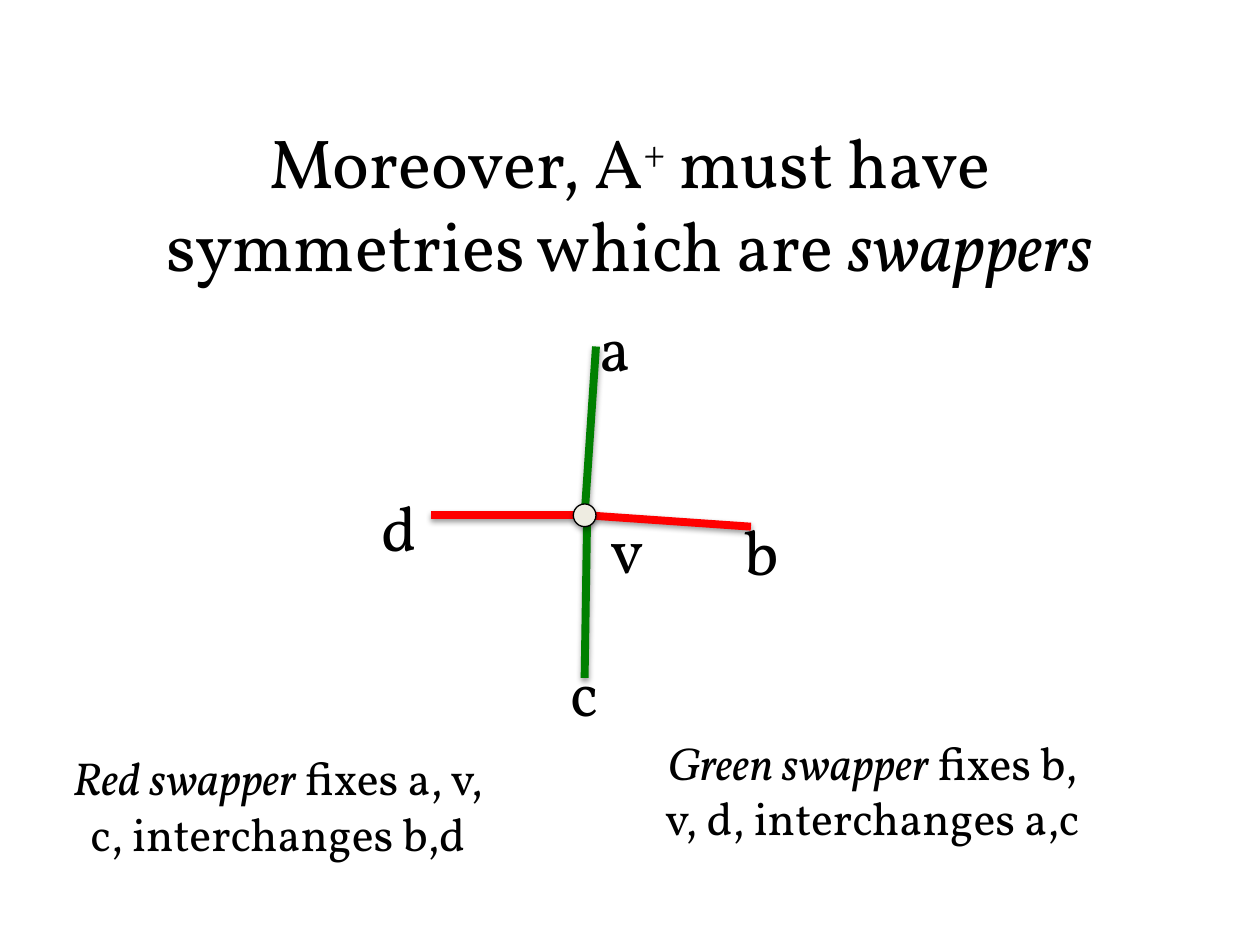
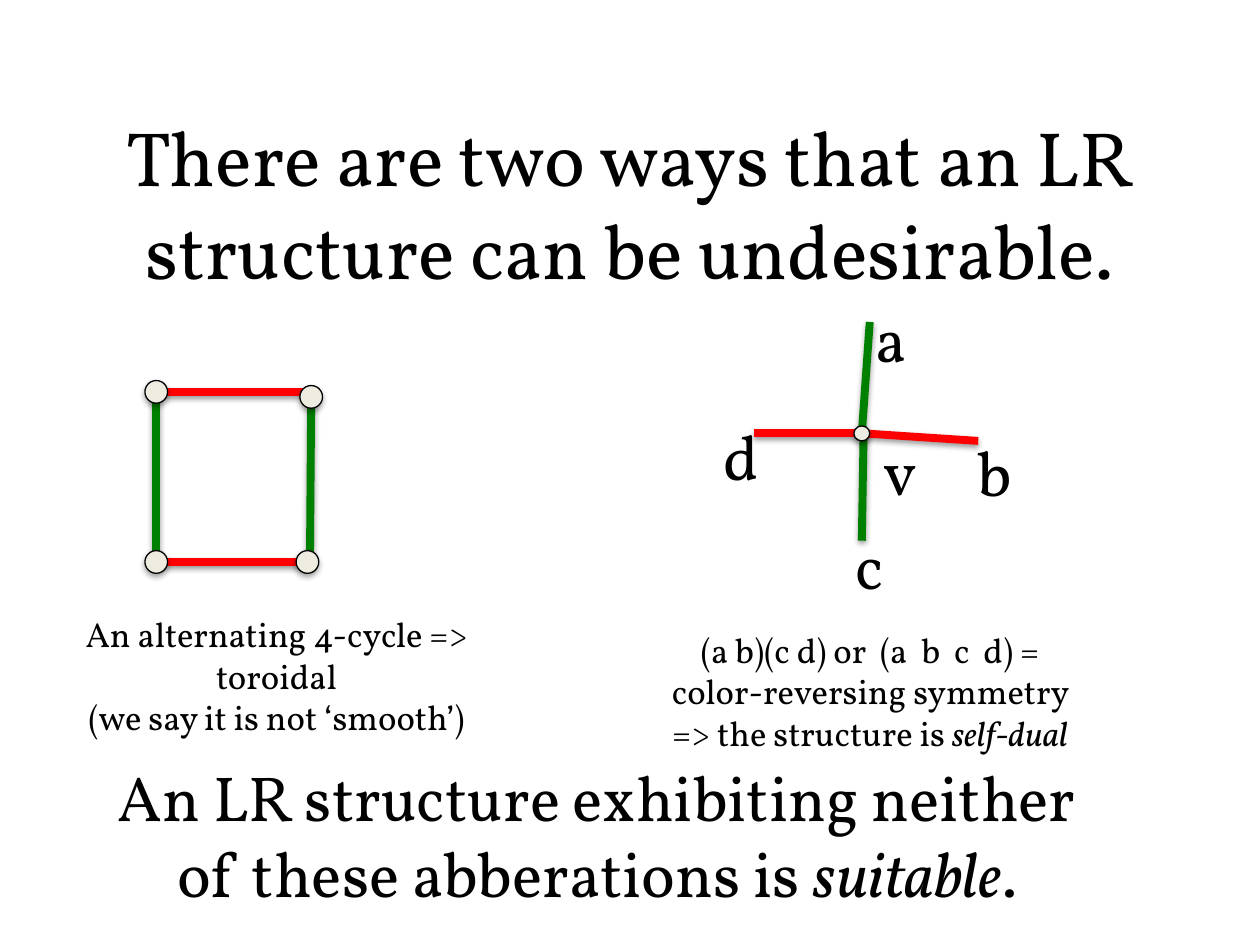
from dataclasses import dataclass
from typing import NamedTuple

import pptx
import pptx.dml.color
import pptx.enum.shapes
import pptx.enum.text
import pptx.oxml
import pptx.oxml.ns
import pptx.shapes.shapetree
import pptx.slide
import pptx.util
from pptx.util import Inches

BLACK = pptx.dml.color.RGBColor(0x00, 0x00, 0x00)
GREEN = pptx.dml.color.RGBColor(0x00, 0x80, 0x00)
RED = pptx.dml.color.RGBColor(0xFF, 0x00, 0x00)
IVORY = pptx.dml.color.RGBColor(0xEE, 0xEC, 0xE1)
FONT = "Vollkorn"
CENTER = pptx.enum.text.PP_ALIGN.CENTER
LEFT = pptx.enum.text.PP_ALIGN.LEFT
MIDDLE = pptx.enum.text.MSO_ANCHOR.MIDDLE
TOP = pptx.enum.text.MSO_ANCHOR.TOP
NODE_SIZE = 0.18
LABEL_SIZE = (0.48, 0.71)


class Run(NamedTuple):
    text: str
    italic: bool = False
    superscript: bool = False


class Box(NamedTuple):
    left: float
    top: float
    width: float
    height: float


class Point(NamedTuple):
    x: float
    y: float


@dataclass(frozen=True)
class Edge:
    start: Point
    end: Point
    color: pptx.dml.color.RGBColor


@dataclass(frozen=True)
class VertexLabel:
    letter: str
    offset: Point


TITLE_BOX = Box(0.75, 0.69, 8.5, 1.83)

CROSS_EDGES = [
    Edge(Point(0, 1.29), Point(0.02, 0), GREEN),
    Edge(Point(0, 0), Point(0.09, -1.34), GREEN),
    Edge(Point(-1.22, 0), Point(0, 0), RED),
    Edge(Point(0.02, 0), Point(1.32, 0.09), RED),
]
CROSS_LABELS = [
    VertexLabel("a", Point(0.02, -1.69)),
    VertexLabel("d", Point(-1.71, -0.26)),
    VertexLabel("v", Point(0.11, -0.09)),
    VertexLabel("c", Point(-0.21, 1.05)),
    VertexLabel("b", Point(1.17, -0.07)),
]
CYCLE_EDGES = [
    Edge(Point(2.46, 4.46), Point(2.47, 3.17), GREEN),
    Edge(Point(1.24, 4.46), Point(1.24, 3.11), GREEN),
    Edge(Point(1.24, 3.11), Point(2.47, 3.11), RED),
    Edge(Point(1.24, 4.46), Point(2.47, 4.46), RED),
]
CYCLE_NODES = [Point(1.24, 4.46), Point(1.24, 3.11), Point(2.44, 4.46), Point(2.47, 3.15)]

Shapes = pptx.shapes.shapetree._BaseGroupShapes


def add_text(
    shapes: Shapes,
    box: Box,
    *paragraphs: list[Run],
    size: float,
    align: pptx.enum.text.PP_ALIGN = CENTER,
    anchor: pptx.enum.text.MSO_ANCHOR = MIDDLE,
) -> None:
    frame = shapes.add_textbox(*map(Inches, box)).text_frame
    frame.word_wrap = True
    frame.vertical_anchor = anchor
    for index, runs in enumerate(paragraphs):
        paragraph = frame.add_paragraph() if index else frame.paragraphs[0]
        paragraph.alignment = align
        for part in runs:
            run = paragraph.add_run()
            run.text = part.text
            run.font.name = FONT
            run.font.size = pptx.util.Pt(size)
            run.font.italic = part.italic
            run.font.color.rgb = BLACK
            if part.superscript:
                run.font._rPr.set("baseline", "30000")


def add_shadow(properties: pptx.oxml.xmlchemy.BaseOxmlElement, distance: int, opacity: int) -> None:
    for inherited in properties.findall(pptx.oxml.ns.qn("a:effectLst")):
        properties.remove(inherited)
    properties.append(pptx.oxml.parse_xml(
        f'<a:effectLst {pptx.oxml.ns.nsdecls("a")}>'
        f'<a:outerShdw blurRad="40000" dist="{distance}" dir="5400000" rotWithShape="0">'
        f'<a:srgbClr val="{BLACK}"><a:alpha val="{opacity * 1000}"/></a:srgbClr>'
        '</a:outerShdw></a:effectLst>'
    ))


def add_edge(shapes: Shapes, edge: Edge) -> None:
    line = shapes.add_connector(
        pptx.enum.shapes.MSO_CONNECTOR.STRAIGHT, *map(Inches, edge.start + edge.end)
    )
    line.line.color.rgb = edge.color
    line.line.width = pptx.util.Pt(4.5)
    add_shadow(line._element.spPr, distance=20000, opacity=38)


def add_node(shapes: Shapes, center: Point, width: float, height: float) -> None:
    box = Box(center.x - width / 2, center.y - height / 2, width, height)
    node = shapes.add_shape(pptx.enum.shapes.MSO_SHAPE.OVAL, *map(Inches, box))
    node.fill.solid()
    node.fill.fore_color.rgb = IVORY
    node.line.color.rgb = BLACK
    node.line.width = pptx.util.Pt(0.75)
    node.shadow.inherit = False
    add_shadow(node._element.spPr, distance=23000, opacity=35)


def add_cross(slide: pptx.slide.Slide, center: Point, scale: Point = Point(1, 1)) -> None:
    def place(offset: Point) -> Point:
        return Point(center.x + offset.x * scale.x, center.y + offset.y * scale.y)

    shapes = slide.shapes.add_group_shape().shapes
    for edge in CROSS_EDGES:
        add_edge(shapes, Edge(place(edge.start), place(edge.end), edge.color))
    add_node(shapes, center, NODE_SIZE * scale.x, NODE_SIZE * scale.y)
    width, height = LABEL_SIZE
    for label in CROSS_LABELS:
        box = Box(*place(label.offset), width * scale.x, height * scale.y)
        add_text(shapes, box, [Run(label.letter)], size=36, align=LEFT, anchor=TOP)


def add_cycle(slide: pptx.slide.Slide) -> None:
    shapes = slide.shapes.add_group_shape().shapes
    for edge in CYCLE_EDGES:
        add_edge(shapes, edge)
    for center in CYCLE_NODES:
        add_node(shapes, center, NODE_SIZE, NODE_SIZE)


def build_swappers(slide: pptx.slide.Slide) -> None:
    title = [
        Run("Moreover, A"),
        Run("+", superscript=True),
        Run(" must have symmetries which are "),
        Run("swappers", italic=True),
    ]
    green_swapper = [Run("Green swapper ", italic=True), Run("fixes b, v, d, interchanges a,c")]
    red_swapper = [Run("Red swapper ", italic=True), Run("fixes a, v, c, interchanges b,d")]
    add_text(slide.shapes, TITLE_BOX, title, size=39.6)
    add_text(slide.shapes, Box(5.11, 5.7, 3.63, 1.13), green_swapper, size=26.4)
    add_cross(slide, Point(4.64, 4.09))
    add_text(slide.shapes, Box(0.39, 5.95, 3.63, 0.88), red_swapper, size=26.4)


def build_undesirable(slide: pptx.slide.Slide) -> None:
    title = [Run("There are two ways that an LR structure can be undesirable.")]
    self_dual = [
        Run("(a b)(c d) or  (a  b  c  d) = color-reversing symmetry => the structure is "),
        Run("self-dual", italic=True),
    ]
    toroidal = [Run("An alternating 4-cycle => toroidal")]
    not_smooth = [Run("(we say it is not ‘smooth’)")]
    suitable = [
        Run("An LR structure exhibiting neither of these abberations is "),
        Run("suitable", italic=True),
        Run("."),
    ]
    add_text(slide.shapes, TITLE_BOX, title, size=44)
    add_text(slide.shapes, Box(5.09, 4.92, 3.63, 1.13), self_dual, size=19.8)
    add_text(slide.shapes, Box(0.38, 4.8, 3.63, 1.12), toroidal, not_smooth, size=19.8)
    add_cycle(slide)
    add_cross(slide, Point(6.84, 3.44), scale=Point(0.7, 0.66))
    add_text(slide.shapes, Box(0.75, 5.92, 7.98, 1.4), suitable, size=36.3)


def main() -> None:
    deck = pptx.Presentation()
    deck.slide_width = Inches(10)
    deck.slide_height = Inches(7.5)
    blank = deck.slide_layouts[6]
    for build in (build_swappers, build_undesirable):
        build(deck.slides.add_slide(blank))
    deck.save("out.pptx")


if __name__ == "__main__":
    main()
